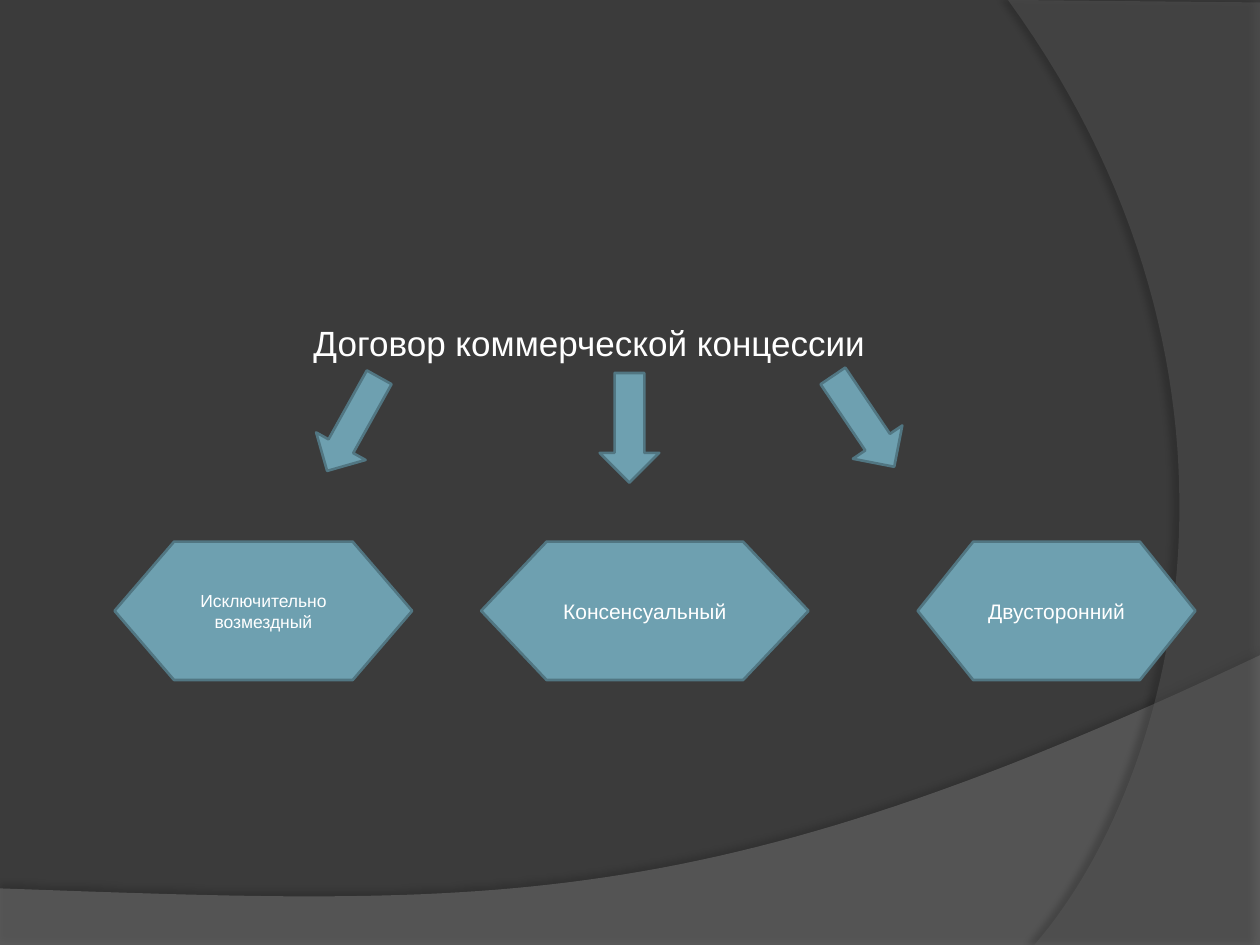
from lxml import etree
from pptx import Presentation
from pptx import util as u
from pptx.dml.color import RGBColor
from pptx.enum import shapes, text
from pptx.oxml import ns

COLORS = {
    "background": "3B3B3B",
    "wave": "7F7F7F",
    "arc": "5E5E5E",
    "shadow": "000000",
    "accent": "6EA0B0",
    "outline": "517682",
    "text": "FFFFFF",
}
FONT = "Arial"
CURVE_STEPS = 60
HEXAGON_TOP, HEXAGON_HEIGHT = 10.92, 2.79


def color(name):
    return RGBColor.from_string(COLORS[name])


def add_child(parent, tag, **attributes):
    child = etree.SubElement(parent, ns.qn(tag))
    for name, value in attributes.items():
        child.set(name, str(value))
    return child


def curve_points(start, first, second, end):
    points = []
    for step in range(CURVE_STEPS + 1):
        t = step / CURVE_STEPS
        weights = ((1 - t) ** 3, 3 * t * (1 - t) ** 2, 3 * t**2 * (1 - t), t**3)
        points.append(tuple(
            sum(weight * value for weight, value in zip(weights, axis))
            for axis in zip(start, first, second, end)
        ))
    return points


def add_backdrop(page, corners, curve, fill, opacity, shadow_opacity, distance, direction):
    points = [(u.Cm(x), u.Cm(y)) for x, y in corners + curve_points(*curve)]
    builder = page.shapes.build_freeform(*points[0])
    builder.add_line_segments(points[1:], close=True)
    shape = builder.convert_to_shape()
    shape.fill.solid()
    shape.fill.fore_color.rgb = color(fill)
    shape.line.fill.background()
    shape.shadow.inherit = False
    properties = shape.element.spPr
    fill_color = properties.find(ns.qn("a:solidFill"))[0]
    add_child(fill_color, "a:alpha", val=opacity * 1000)
    shadow = add_child(
        properties.find(ns.qn("a:effectLst")), "a:outerShdw",
        blurRad=u.Pt(4), dist=u.Pt(distance), dir=direction * 60000,
        algn="ctr", rotWithShape=0,
    )
    shadow_color = add_child(shadow, "a:srgbClr", val=COLORS["shadow"])
    add_child(shadow_color, "a:alpha", val=shadow_opacity * 1000)


def style_text(para, size):
    for span in para.runs:
        span.font.name = FONT
        span.font.size = u.Pt(size)
        span.font.color.rgb = color("text")


def add_heading(page, wording):
    box = page.shapes.add_textbox(u.Cm(1.27), u.Cm(4.45), u.Cm(20.75), u.Cm(12.57))
    frame = box.text_frame
    frame.word_wrap = True
    frame.margin_left, frame.margin_top = u.Cm(5.05), u.Cm(2.03)
    frame.text = wording
    style_text(frame.paragraphs[0], 20)


def add_accent_shape(page, kind, left, top, width, height):
    shape = page.shapes.add_shape(kind, u.Cm(left), u.Cm(top), u.Cm(width), u.Cm(height))
    shape.shadow.inherit = False
    shape.fill.solid()
    shape.fill.fore_color.rgb = color("accent")
    shape.line.color.rgb = color("outline")
    shape.line.width = u.Pt(1.5)
    return shape


def add_arrow(page, left, top, width, height, rotation):
    arrow = add_accent_shape(page, shapes.MSO_SHAPE.DOWN_ARROW, left, top, width, height)
    arrow.rotation = rotation


def add_hexagon(page, left, width, wording, size):
    hexagon = add_accent_shape(
        page, shapes.MSO_SHAPE.FLOWCHART_PREPARATION,
        left, HEXAGON_TOP, width, HEXAGON_HEIGHT,
    )
    frame = hexagon.text_frame
    frame.word_wrap = True
    frame.vertical_anchor = text.MSO_ANCHOR.MIDDLE
    frame.text = wording
    para = frame.paragraphs[0]
    para.alignment = text.PP_ALIGN.CENTER
    style_text(para, size)


def main():
    deck = Presentation()
    deck.slide_width, deck.slide_height = u.Cm(25.4), u.Cm(19.05)
    page = deck.slides.add_slide(deck.slide_layouts[6])
    page.background.fill.solid()
    page.background.fill.fore_color.rgb = color("background")

    add_backdrop(
        page, [(0, 17.91), (0, 19.08), (25.4, 19.08)],
        [(25.4, 13.21), (14.2, 18.52), (9.93, 18.26), (0, 17.91)],
        "wave", 45, 35, 3.5, 270,
    )
    add_backdrop(
        page, [(25.4, 0.05), (25.4, 19.05)],
        [(20.85, 19.05), (23.75, 15.72), (25.86, 7.62), (20.32, 0)],
        "arc", 40, 45, 4, 180,
    )
    add_heading(page, "Договор коммерческой концессии")
    for arrow in (
        (12.09, 7.52, 1.2, 2.21, 0),
        (6.55, 7.47, 1.14, 2.16, 29.1),
        (16.81, 7.39, 1.2, 2.21, 326),
    ):
        add_arrow(page, *arrow)
    for hexagon in (
        (2.31, 6, "Исключительно возмездный", 10),
        (9.7, 6.6, "Консенсуальный", 12),
        (18.5, 5.6, "Двусторонний", 12),
    ):
        add_hexagon(page, *hexagon)
    deck.save("out.pptx")


if __name__ == "__main__":
    main()
